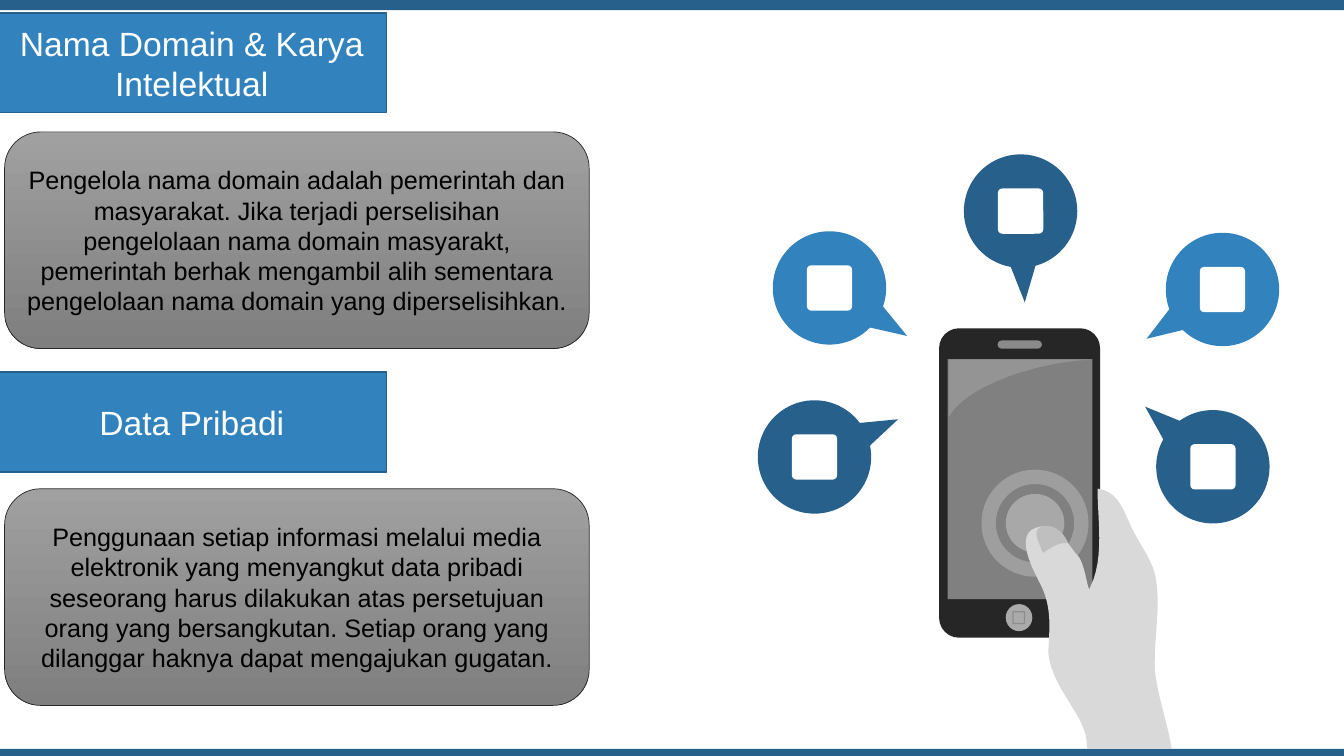
"""Builds the slide on domain names and personal data."""
from math import atan2, cos, pi, sin

from lxml import etree
from pptx import Presentation
from pptx.dml.color import RGBColor
from pptx.enum.shapes import MSO_SHAPE
from pptx.enum.text import MSO_ANCHOR, MSO_AUTO_SIZE, PP_ALIGN
from pptx.oxml.ns import qn
from pptx.util import Pt

RECT = MSO_SHAPE.RECTANGLE
ROUND = MSO_SHAPE.ROUNDED_RECTANGLE
OVAL = MSO_SHAPE.OVAL
CENTER = PP_ALIGN.CENTER
MIDDLE = MSO_ANCHOR.MIDDLE
FIXED = MSO_AUTO_SIZE.NONE

NAVY = RGBColor(0x28, 0x60, 0x8C)
BLUE = RGBColor(0x32, 0x82, 0xBE)
EDGE = RGBColor(0x25, 0x60, 0x8D)
DARK = RGBColor(0x26, 0x26, 0x26)
GRAY = RGBColor(0x80, 0x80, 0x80)
PALE = RGBColor(0xEC, 0xEC, 0xEC)
SKIN = RGBColor(0xD9, 0xD9, 0xD9)
NAIL = RGBColor(0xBF, 0xBF, 0xBF)
TOP = RGBColor(0xA0, 0xA0, 0xA0)
BASE = RGBColor(0x7F, 0x7F, 0x7F)
WHITE = RGBColor(0xFF, 0xFF, 0xFF)
BLACK = RGBColor(0, 0, 0)

WIDE, HIGH = 960, 540
STEP = 256.6
RADIUS, SPREAD = 40.5, 0.22
ICON = 32.4

SECTIONS = [
    ("Nama Domain & Karya Intelektual",
     "Pengelola nama domain adalah pemerintah dan masyarakat. Jika terjadi "
     "perselisihan pengelolaan nama domain masyarakt, pemerintah berhak "
     "mengambil alih sementara pengelolaan nama domain yang diperselisihkan."),
    ("Data Pribadi",
     "Penggunaan setiap informasi melalui media elektronik yang menyangkut "
     "data pribadi seseorang harus dilakukan atas persetujuan orang yang "
     "bersangkutan. Setiap orang yang dilanggar haknya dapat mengajukan "
     "gugatan."),
]
BUBBLES = [
    ((873.2, 206.8), (819, 242), BLUE),
    ((866.4, 333.4), (818, 290.5), NAVY),
    ((729, 150.8), (732, 216), NAVY),
    ((592.5, 205.7), (648, 240), BLUE),
    ((581.8, 326.4), (641.5, 299.5), NAVY),
]
SHINE = [(677.5, 257), (778, 257), (744, 258.5, 691, 274, 677.5, 298)]
HAND = [
    (784, 349), (798, 351, 802, 363, 807, 374),
    (813, 388, 824, 400, 826, 415), (829, 436, 824, 458, 825, 479),
    (827, 498, 834, 516, 837, 535), (777, 535),
    (775, 528, 778, 530, 773, 518), (768, 505, 747, 482, 749, 462),
    (750, 446, 751, 431, 742, 415), (737, 405, 725, 382, 740, 377),
    (755, 371, 763, 390, 770, 397), (776, 404, 777, 427, 779, 419),
    (789, 398, 784, 371, 784, 349),
]
THUMB = [
    (745, 376), (755, 374, 761, 383, 763, 388),
    (758, 387, 752, 390, 745, 395), (741, 385, 737, 378, 745, 376),
]


def paint(shape, fill=None, line=None, width=1, alpha=100):
    """Set fill, outline and opacity, without a shadow."""
    if fill is None:
        shape.fill.background()
    else:
        shape.fill.solid()
        shape.fill.fore_color.rgb = fill
    if line is None:
        shape.line.fill.background()
    else:
        shape.line.color.rgb = line
        shape.line.width = Pt(width)
    if alpha < 100:
        for color in shape.element.spPr.iter(qn("a:srgbClr")):
            etree.SubElement(color, qn("a:alpha"), val=str(alpha * 1000))
    shape.shadow.inherit = False


def add(shapes, kind, box, adj=None, **look):
    """Add a painted preset shape."""
    shape = shapes.add_shape(kind, *map(Pt, box))
    if adj is not None:
        shape.adjustments[0] = adj
    paint(shape, **look)
    return shape


def trace(shapes, points, color, alpha=100):
    """Add a closed outline through points."""
    spots = [(Pt(x), Pt(y)) for x, y in points]
    pen = shapes.build_freeform(*spots[0], scale=1.0)
    pen.add_line_segments(spots[1:], close=True)
    paint(pen.convert_to_shape(), color, alpha=alpha)


def smooth(parts, count=12):
    """Turn corners and cubic curves into points."""
    points = [parts[0]]
    for part in parts[1:]:
        if len(part) == 2:
            points.append(part)
            continue
        knots = [points[-1], part[:2], part[2:4], part[4:]]
        for i in range(1, count + 1):
            t = i / count
            rates = ((1 - t) ** 3, 3 * t * (1 - t) ** 2,
                     3 * t * t * (1 - t), t ** 3)
            points.append(tuple(sum(r * k[axis] for r, k in zip(rates, knots))
                                for axis in (0, 1)))
    return points


def bubble(shapes, mid, tip, color, count=72):
    """Add a round speech bubble with a plain tile."""
    x, y = mid
    start = atan2(tip[1] - y, tip[0] - x) + SPREAD
    sweep = 2 * (pi - SPREAD)
    turns = [start + sweep * i / count for i in range(count + 1)]
    ring = [(x + RADIUS * cos(a), y + RADIUS * sin(a)) for a in turns]
    trace(shapes, [tip] + ring, color)
    add(shapes, ROUND, (x - ICON / 2, y - ICON / 2, ICON, ICON), 0.1,
        fill=WHITE)


def write(shape, text, size, color):
    """Put centred text in a shape."""
    frame = shape.text_frame
    frame.text = text
    frame.word_wrap = True
    frame.auto_size = FIXED
    frame.vertical_anchor = MIDDLE
    para = frame.paragraphs[0]
    para.alignment = CENTER
    font = para.runs[0].font
    font.name, font.size, font.color.rgb = "Arial", Pt(size), color


def banner(shape, text, top):
    """Place and format a heading."""
    shape.left, shape.top = Pt(-2), Pt(top)
    shape.width, shape.height = Pt(278), Pt(71.3)
    paint(shape, BLUE, EDGE)
    write(shape, text, 24, WHITE)


def panel(shapes, text, top):
    """Add a shaded text panel."""
    shape = add(shapes, ROUND, (3.3, top, 417.6, 154.8), line=DARK, width=0.5)
    shape.fill.gradient()
    shape.fill.gradient_angle = 270
    for stop, color in zip(shape.fill.gradient_stops, (TOP, BASE)):
        stop.color.rgb = color
    write(shape, text, 18, BLACK)


def phone(shapes):
    """Draw the phone and its touch mark."""
    add(shapes, ROUND, (670.8, 234.5, 115, 221), 0.123, fill=DARK)
    add(shapes, RECT, (677, 256.5, 103.3, 171.5), fill=GRAY)
    add(shapes, ROUND, (712.6, 243.2, 31.6, 5.8), 0.5, fill=PALE, alpha=51)
    add(shapes, OVAL, (718.4, 431.5, 19, 19.3), fill=PALE, alpha=67)
    add(shapes, RECT, (723.6, 437, 8.2, 8.4), line=DARK, alpha=22)
    trace(shapes, smooth(SHINE), WHITE, 16)
    add(shapes, OVAL, (718.4, 352.8, 41.8, 41.8), fill=WHITE, alpha=32)
    add(shapes, OVAL, (706.2, 340.6, 66.2, 66.2),
        line=WHITE, width=10.25, alpha=24)


def main():
    """Build and save the slide."""
    deck = Presentation()
    deck.slide_width, deck.slide_height = Pt(WIDE), Pt(HIGH)
    slide = deck.slides.add_slide(deck.slide_layouts[5])
    shapes = slide.shapes
    add(shapes, RECT, (0, 0, WIDE, 7.2), fill=NAVY)
    add(shapes, RECT, (0, 535, WIDE, 5), fill=NAVY)
    scene = shapes.add_group_shape().shapes
    phone(scene)
    for mid, tip, color in BUBBLES:
        bubble(scene, mid, tip, color)
    hand = shapes.add_group_shape().shapes
    trace(hand, smooth(HAND), SKIN)
    trace(hand, smooth(THUMB), NAIL)
    for i, (head, body) in enumerate(SECTIONS):
        top = 9.2 + i * STEP
        box = shapes.title if i == 0 else add(shapes, RECT, (0, 0, 1, 1))
        banner(box, head, top)
        panel(shapes, body, 94.2 + i * 254.9)
    deck.save("out.pptx")


if __name__ == "__main__":
    main()
